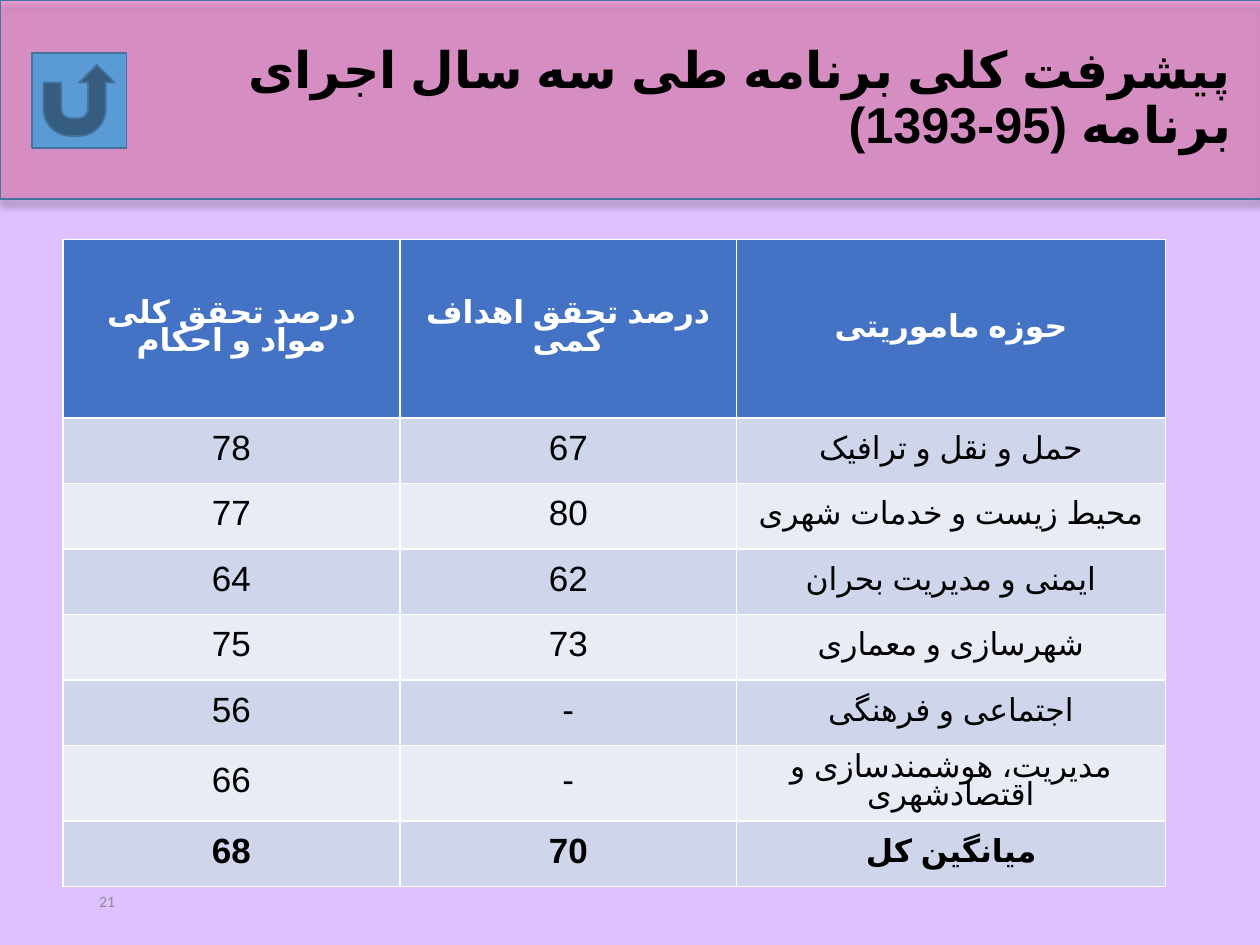
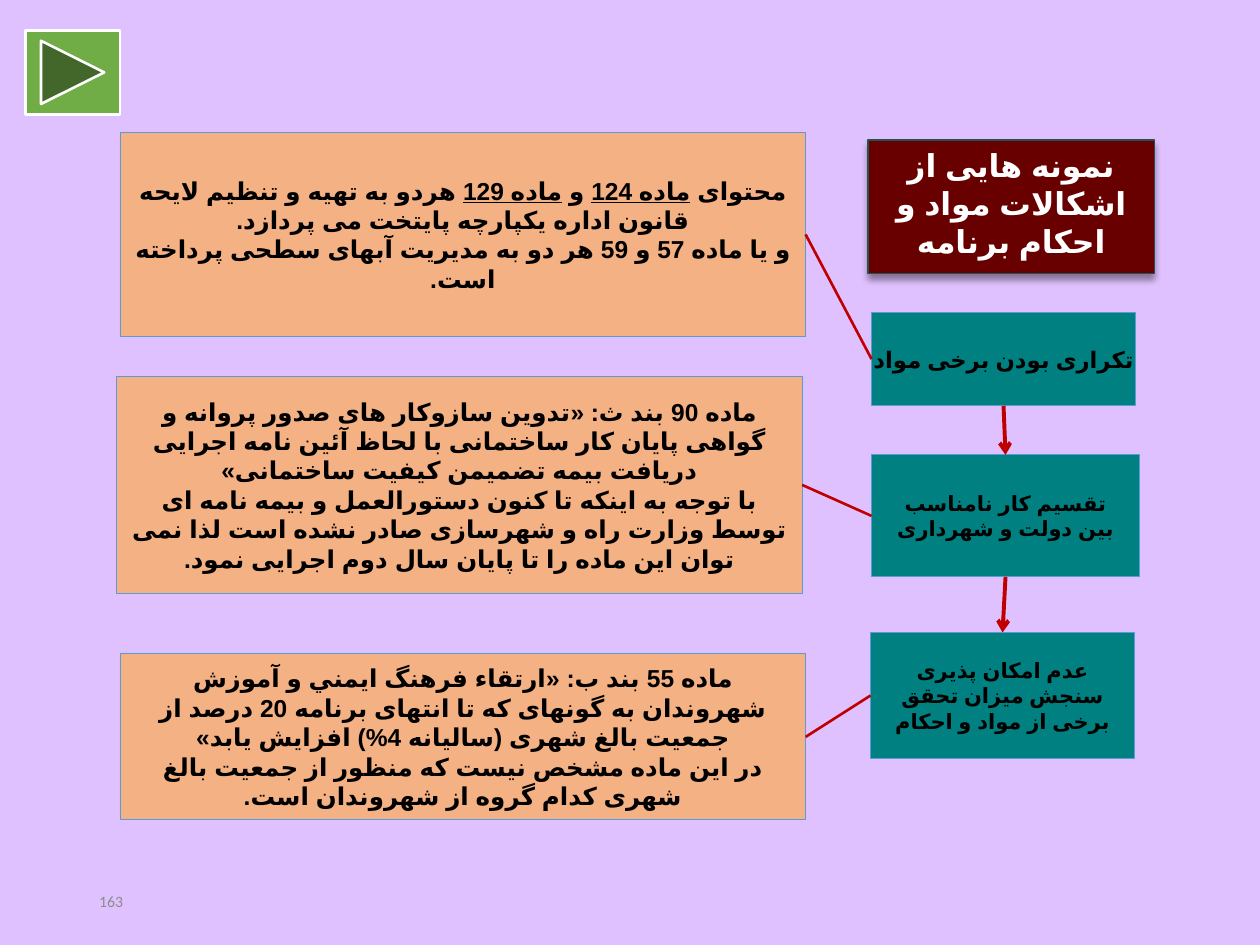
from lxml.etree import SubElement as Sub
from pptx import Presentation
from pptx.dml.color import RGBColor
from pptx.enum.lang import MSO_LANGUAGE_ID as Lang
from pptx.enum.shapes import MSO_CONNECTOR as Link, MSO_SHAPE as Kind
from pptx.enum.text import MSO_ANCHOR as Anchor, MSO_AUTO_SIZE as Fit, PP_ALIGN as Align
from pptx.oxml.ns import qn
from pptx.util import Cm, Pt

# Content: places are left, top, width, height in cm; \n breaks a line
TITLE = "پیشرفت کلی برنامه طی سه سال اجرای\nبرنامه (95-1393)"
ROWS = [
    ("درصد تحقق کلی\nمواد و احکام", "درصد تحقق اهداف\nکمی", "حوزه ماموریتی"),
    ("78", "67", "حمل و نقل و ترافیک"),
    ("77", "80", "محیط زیست و خدمات شهری"),
    ("64", "62", "ایمنی و مدیریت بحران"),
    ("75", "73", "شهرسازی و معماری"),
    ("56", "-", "اجتماعی و فرهنگی"),
    ("66", "-", "مدیریت، هوشمندسازی و\nاقتصادشهری"),
    ("68", "70", "میانگین کل"),
]
COLS = (6.79, 6.79, 8.64)
HEAD_H, ROW_H, TALL_H = 3.6, 1.32, 1.52

HEAD = ["نمونه هایی از", "اشکالات مواد و\nاحکام برنامه"]
# Each issue: text, size, place, then its note (underscores mark underlining)
ISSUES = [
    ("تکراری بودن برخی مواد", 13, (17.57, 6.3, 5.32, 1.88),
     ["محتوای _ماده 124_ و _ماده 129_ هردو به تهیه و تنظیم لایحه\n"
      "قانون اداره یکپارچه پایتخت می پردازد.",
      "و یا ماده 57 و 59 هر دو به مدیریت آبهای سطحی پرداخته\nاست."],
     (2.42, 2.67, 13.82, 4.11)),
    ("تقسیم کار نامناسب\nبین دولت و شهرداری", 12, (17.57, 9.17, 5.4, 2.46),
     ["ماده 90 بند ث: «تدوین سازوکار های صدور پروانه و\n"
      "گواهی پایان کار ساختمانی با لحاظ آئین نامه اجرایی\n"
      "دریافت بیمه تضمیمن کیفیت ساختمانی»",
      "با توجه به اینکه تا کنون دستورالعمل و بیمه نامه ای\n"
      "توسط وزارت راه و شهرسازی صادر نشده است لذا نمی\n"
      "توان این ماده را تا پایان سال دوم اجرایی نمود."],
     (2.35, 7.59, 13.82, 4.37)),
    ("عدم امکان پذیری\nسنجش میزان تحقق\nبرخی از مواد و احکام", 12,
     (17.55, 12.75, 5.32, 2.54),
     ["ماده 55 بند ب: «ارتقاء فرهنگ ايمني و آموزش\n"
      "شهروندان به گونهای که تا انتهای برنامه 20 درصد از\n"
      "جمعیت بالغ شهری (سالیانه 4%) افزایش یابد»",
      "در این ماده مشخص نیست که منظور از جمعیت بالغ\n"
      "شهری کدام گروه از شهروندان است."],
     (2.42, 13.18, 13.82, 3.35)),
]

# Shared look
BACK, BLACK, WHITE, GREY = "E0C1FF", "000000", "FFFFFF", "8C8C8C"
PINK, NAVY, SKY = "FF6699", "43739E", "5B9BD5"
PEACH, TEAL, RED, WINE = "F4B183", "008080", "C00000", "680000"
BLUE, BANDS = "4472C4", ("E9EBF5", "CFD5EA")


def rgb(code):
    return RGBColor.from_string(code)


def paint(item, code):
    item.fill.solid()
    item.fill.fore_color.rgb = rgb(code)


def edge(item, code, width):
    item.line.color.rgb = rgb(code)
    item.line.width = Pt(width)


def write(frame, lines, size, color=BLACK, bold=True, align=Align.CENTER,
          space=None, font="Calibri", script="Arial"):
    """Fill a frame with right-to-left paragraphs."""
    frame.word_wrap = True
    for i, line in enumerate(lines):
        para = frame.add_paragraph() if i else frame.paragraphs[0]
        for k, row in enumerate(line.split("\n")):
            if k:
                Sub(Sub(para._p, qn("a:br")), qn("a:rPr"), sz=str(int(size * 100)))
            for j, part in enumerate(row.split("_")):
                run = para.add_run()
                run.text = part
                run.font.language_id = Lang.FARSI
                if j % 2:
                    run.font.underline = True
        para.alignment = align
        if space:
            para.line_spacing = space
        look = para.font
        look.name, look.size, look.bold = font, Pt(size), bold
        look.color.rgb = rgb(color)
        props = para._p.get_or_add_pPr()
        props.set("rtl", "1")
        Sub(props.find(qn("a:defRPr")), qn("a:cs"), typeface=script)


def shade(shape):
    """Give a soft shadow below the shape."""
    shape.shadow.inherit = False
    glow = Sub(shape._element.spPr.find(qn("a:effectLst")), qn("a:outerShdw"),
               blurRad=str(Pt(4)), dist=str(Pt(3)), dir="5400000", rotWithShape="0")
    Sub(Sub(glow, qn("a:srgbClr"), val=BLACK), qn("a:alpha"), val="40000")


def box(slide, place, fill, line, width, kind=Kind.RECTANGLE):
    shape = slide.shapes.add_shape(kind, *map(Cm, place))
    shape.shadow.inherit = False
    paint(shape, fill)
    edge(shape, line, width)
    shape.text_frame.vertical_anchor = Anchor.MIDDLE
    return shape


def join(slide, start, site, end, goal, width, arrow=False):
    """Glue a line between two boxes; sites: 0 top, 1 left, 2 bottom, 3 right."""
    line = slide.shapes.add_connector(Link.STRAIGHT, 0, 0, 0, 0)
    line.begin_connect(start, site)
    line.end_connect(end, goal)
    edge(line, RED, width)
    props = line._element.spPr
    if arrow:
        Sub(props.find(qn("a:ln")), qn("a:tailEnd"), type="arrow")
    Sub(props, qn("a:effectLst"))


def page(deck, number, place, lines, size, anchor, **look):
    """Start a slide with its title and page number."""
    slide = deck.slides.add_slide(deck.slide_layouts[5])
    title = slide.shapes.title
    title.left, title.top, title.width, title.height = map(Cm, place)
    frame = title.text_frame
    write(frame, lines, size, **look)
    frame.auto_size, frame.vertical_anchor = Fit.NONE, anchor
    foot = slide.shapes.add_textbox(*map(Cm, (1.75, 17.65, 5.72, 1.02))).text_frame
    foot.vertical_anchor = Anchor.MIDDLE
    write(foot, [number], 9, GREY, False, Align.LEFT, script="Calibri")
    return slide


def progress(deck):
    slide = page(deck, "21", (3.18, 0.71, 21.89, 2.59), [TITLE], 28.8,
                 Anchor.MIDDLE, align=Align.RIGHT, space=0.9)

    # Translucent band behind the title
    band = box(slide, (0.01, 0, 25.4, 4.02), PINK, NAVY, 1)
    tint = band._element.spPr.find(qn("a:solidFill"))[0]
    Sub(tint, qn("a:alpha"), val="36000")
    shade(band)
    slide.shapes._spTree.insert(2, band._element)
    box(slide, (0.64, 1.07, 1.91, 1.91), SKY, NAVY, 1, Kind.ACTION_BUTTON_RETURN)

    # Results table: rows with a broken line are taller
    highs = [HEAD_H] + [TALL_H if "\n" in row[-1] else ROW_H for row in ROWS[1:]]
    table = slide.shapes.add_table(len(ROWS), len(COLS), Cm(1.27), Cm(4.83),
                                   Cm(sum(COLS)), Cm(sum(highs))).table
    for col, width in zip(table.columns, COLS):
        col.width = Cm(width)
    for r, row in enumerate(ROWS):
        table.rows[r].height = Cm(highs[r])
        for c, text in enumerate(row):
            cell = table.cell(r, c)
            paint(cell, BANDS[r % 2] if r else BLUE)
            cell.vertical_anchor = Anchor.MIDDLE
            write(cell.text_frame, [text], 20 if r and c < 2 else 18,
                  BLACK if r else WHITE, r in (0, len(ROWS) - 1), space=0.8)


def issues(deck):
    slide = page(deck, "163", (17.5, 2.82, 5.77, 2.69), HEAD, 18,
                 Anchor.TOP, color=WHITE, font="Arial")
    title = slide.shapes.title
    paint(title, WINE)
    edge(title, "245252", 0.75)
    shade(title)
    box(slide, (0.51, 0.61, 1.91, 1.7), "70AD47", WHITE, 1.5,
        Kind.ACTION_BUTTON_FORWARD_OR_NEXT)

    # Issues down the right, each tied to its note and to the next issue
    last = None
    for text, size, place, lines, spot in ISSUES:
        note = box(slide, spot, PEACH, SKY, 0.5)
        write(note.text_frame, lines, 14)
        issue = box(slide, place, TEAL, SKY, 0.5)
        write(issue.text_frame, [text], size)
        if last is None:
            issue.text_frame.word_wrap = False
        else:
            join(slide, last, 2, issue, 0, 2.25, arrow=True)
        join(slide, issue, 1, note, 3, 1.5)
        last = issue


def main():
    deck = Presentation()
    deck.slide_width, deck.slide_height = Cm(25.4), Cm(19.05)
    paint(deck.slide_master.background, BACK)
    progress(deck)
    issues(deck)
    deck.save("out.pptx")


if __name__ == "__main__":
    main()
